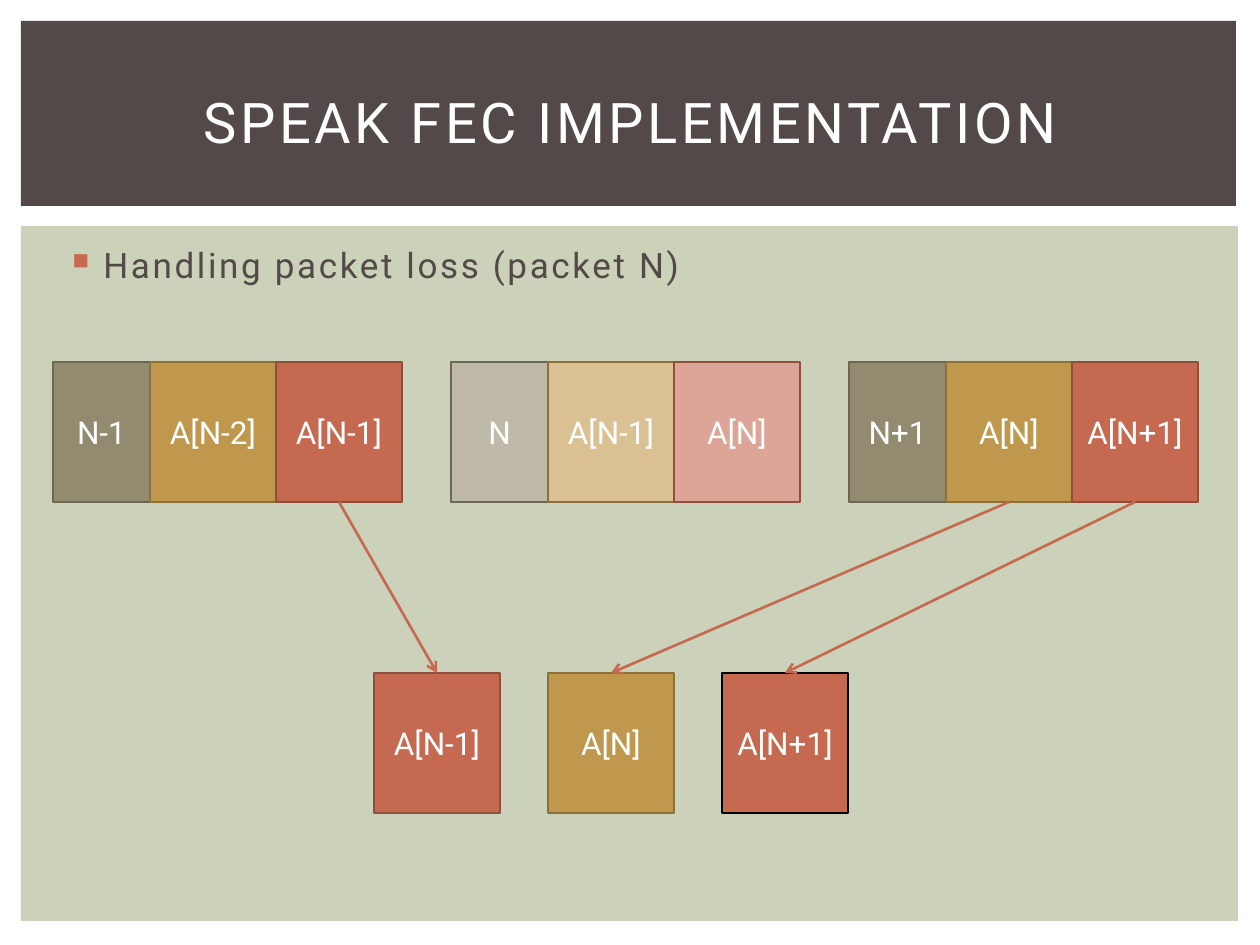
from dataclasses import dataclass

from lxml import etree
from pptx import Presentation
from pptx.dml.color import RGBColor
from pptx.enum.shapes import MSO_CONNECTOR, MSO_SHAPE
from pptx.enum.text import MSO_ANCHOR, PP_ALIGN
from pptx.oxml.ns import qn
from pptx.shapes.autoshape import Shape
from pptx.slide import Slide
from pptx.util import Emu, Pt

RECT = MSO_SHAPE.RECTANGLE
STRAIGHT = MSO_CONNECTOR.STRAIGHT
TOP, MIDDLE = MSO_ANCHOR.TOP, MSO_ANCHOR.MIDDLE
LEFT, CENTER = PP_ALIGN.LEFT, PP_ALIGN.CENTER
UPPER, LOWER = 0, 2  # connection sites of a rectangle


@dataclass(frozen=True)
class Theme:
    font: str = "Roboto"
    white: str = "FFFFFF"
    black: str = "000000"
    dark: str = "534949"
    panel: str = "CCD1B9"
    red: str = "C66951"
    title: int = 32
    body: int = 20
    label: int = 18
    line: float = 1.5


@dataclass(frozen=True)
class Tone:
    fill: str
    edge: str


@dataclass(frozen=True)
class Packet:
    labels: tuple[str, str, str]
    tones: tuple[Tone, Tone, Tone]


THEME = Theme()
GRAY = Tone("928B70", "6C6753")
GOLD = Tone("BF974D", "8D7039")
RED = Tone(THEME.red, "924E3C")
KEPT = (GRAY, GOLD, RED)
LOST = (Tone("BEB9A9", GRAY.edge), Tone("D9C194", GOLD.edge),
        Tone("DDA597", RED.edge))

PACKETS = (
    Packet(("N-1", "A[N-2]", "A[N-1]"), KEPT),
    Packet(("N", "A[N-1]", "A[N]"), LOST),
    Packet(("N+1", "A[N]", "A[N+1]"), KEPT),
)
OUTPUT = (("A[N-1]", RED), ("A[N]", GOLD),
          ("A[N+1]", Tone(THEME.red, THEME.black)))
# (packet, part) that feeds each output block
FEEDS = ((0, 2), (2, 1), (2, 2))

TAG, BLOCK, HIGH = 97, 126, 140
ROW_X, ROW_Y, ROW_STEP = 53, 362, 398
OUT_X, OUT_Y, OUT_STEP = 374, 673, 174


def px(n: int) -> Emu:
    return Emu(round(n * 914400 / 126))


def rgb(code: str) -> RGBColor:
    return RGBColor.from_string(code)


def write(shape: Shape, text: str, size: int, color: str, align: PP_ALIGN,
          anchor: MSO_ANCHOR, gap: int = 0) -> None:
    """Set one formatted paragraph; gap is letter spacing in 1/100 pt."""
    frame = shape.text_frame
    frame.word_wrap = True
    frame.vertical_anchor = anchor
    frame.text = text
    para = frame.paragraphs[0]
    para.alignment = align
    para.font.name = THEME.font
    para.font.size = Pt(size)
    para.font.color.rgb = rgb(color)
    if gap:
        para.runs[0].font._element.set("spc", str(gap))


def rect(slide: Slide, x: int, y: int, w: int, h: int, fill: str) -> Shape:
    shape = slide.shapes.add_shape(RECT, px(x), px(y), px(w), px(h))
    shape.shadow.inherit = False
    shape.fill.solid()
    shape.fill.fore_color.rgb = rgb(fill)
    shape.line.fill.background()
    return shape


def block(slide: Slide, x: int, y: int, w: int, text: str, tone: Tone) -> Shape:
    shape = rect(slide, x, y, w, HIGH, tone.fill)
    shape.line.color.rgb = rgb(tone.edge)
    shape.line.width = Pt(THEME.line)
    shape.text_frame.margin_left = shape.text_frame.margin_right = 0
    write(shape, text, THEME.label, THEME.white, CENTER, MIDDLE)
    return shape


def row(slide: Slide, x: int, packet: Packet) -> list[Shape]:
    parts = []
    for text, tone, w in zip(packet.labels, packet.tones, (TAG, BLOCK, BLOCK)):
        parts.append(block(slide, x, ROW_Y, w, text, tone))
        x += w
    return parts


def arrow(slide: Slide, start: Shape, end: Shape) -> None:
    link = slide.shapes.add_connector(STRAIGHT, 0, 0, 0, 0)
    link.begin_connect(start, LOWER)
    link.end_connect(end, UPPER)
    link.line.color.rgb = rgb(THEME.red)
    link.line.width = Pt(THEME.line)
    etree.SubElement(link.line._get_or_add_ln(), qn("a:tailEnd"), type="arrow")
    etree.SubElement(link._element.spPr, qn("a:effectLst"))


def bullet(shape: Shape) -> None:
    para = shape.text_frame.paragraphs[0]
    para.space_before = Pt(2)
    props = para._p.get_or_add_pPr()
    props.set("marL", str(px(38)))
    props.set("indent", str(-px(31)))
    mark = etree.Element(qn("a:buClr"))
    etree.SubElement(mark, qn("a:srgbClr"), val=THEME.red)
    size = etree.Element(qn("a:buSzPct"), val="65000")
    char = etree.Element(qn("a:buChar"), char="■")
    at = props.index(props.find(qn("a:spcBef"))) + 1
    props[at:at] = [mark, size, char]


def main() -> None:
    deck = Presentation()
    deck.slide_width, deck.slide_height = px(1260), px(945)
    slide = deck.slides.add_slide(deck.slide_layouts[5])

    # Panel and title band
    rect(slide, 21, 226, 1217, 695, THEME.panel)
    rect(slide, 21, 21, 1215, 185, THEME.dark)

    # Title, raised above the band
    title = slide.shapes.title
    title.left, title.top = px(53), px(49)
    title.width, title.height = px(1155), px(145)
    write(title, "SPEAK FEC IMPLEMENTATION", THEME.title, THEME.white,
          CENTER, MIDDLE, 200)
    slide.shapes._spTree.append(title._element)

    # Bullet line
    body = slide.shapes.add_textbox(px(53), px(237), px(1158), px(607))
    write(body, "Handling packet loss (packet N)", THEME.body, THEME.dark,
          LEFT, TOP, 150)
    bullet(body)

    # Sent packets and recovered blocks
    rows = [row(slide, ROW_X + i * ROW_STEP, packet)
            for i, packet in enumerate(PACKETS)]
    outs = [block(slide, OUT_X + i * OUT_STEP, OUT_Y, BLOCK, text, tone)
            for i, (text, tone) in enumerate(OUTPUT)]

    # Where each recovered block comes from
    for (i, j), end in zip(FEEDS, outs):
        arrow(slide, rows[i][j], end)

    deck.save("out.pptx")


if __name__ == "__main__":
    main()
